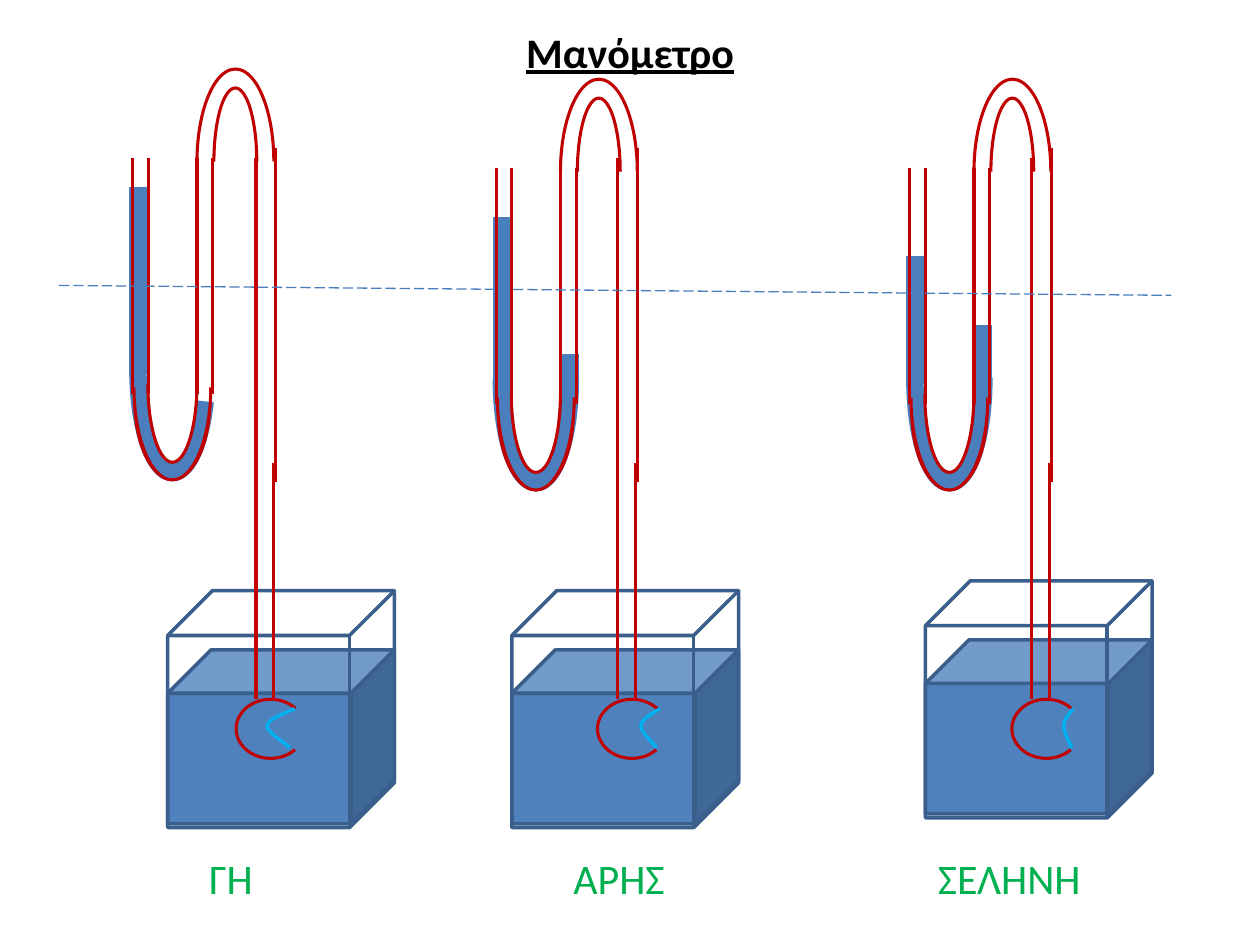
import pptx
import pptx.dml.color
import pptx.enum.dml
import pptx.enum.shapes
import pptx.enum.text
import pptx.oxml.ns
import pptx.util
from lxml import etree

Pt = pptx.util.Pt
SHAPES = pptx.enum.shapes.MSO_SHAPE
RED, WATER, GLASS, FILL = "C00000", "4B7EBC", "3A5F8C", "4F81BD"
HALF, WATER_ARC, BULB = (162, 53.93), (120, 0), (186.36, 138.53)


def rgb(value):
    """Return the colour for a hex string."""
    return pptx.dml.color.RGBColor.from_string(value)


def set_line(sp, color, width):
    """Set the outline colour and width."""
    sp.line.color.rgb = rgb(color)
    sp.line.width = Pt(width)


def add_line(s, x1, y1, x2, y2, color=RED, width=1.75):
    """Add a straight line without a shadow."""
    sp = s.shapes.add_connector(
        pptx.enum.shapes.MSO_CONNECTOR.STRAIGHT, Pt(x1), Pt(y1), Pt(x2), Pt(y2))
    set_line(sp, color, width)
    etree.SubElement(sp._element.spPr, pptx.oxml.ns.qn("a:effectLst"))
    return sp


def add_outline(s, kind, box, adjustments, color, width, fill=None):
    """Add a preset shape with an outline and an optional fill."""
    sp = s.shapes.add_shape(kind, *[Pt(v) for v in box])
    sp.shadow.inherit = False
    for i, value in enumerate(adjustments):
        sp.adjustments[i] = value
    if fill:
        sp.fill.solid()
        sp.fill.fore_color.rgb = rgb(fill)
    else:
        sp.fill.background()
    set_line(sp, color, width)
    return sp


def add_arc(s, cx, cy, w, h, rotation, angles, color=RED, width=1.75):
    """Add a rotated arc around a centre point."""
    box = (cx - w / 2, cy - h / 2, w, h)
    add_outline(s, SHAPES.ARC, box, angles, color, width).rotation = rotation


def add_text(sp, text, color, bold=None, underline=None):
    """Write one run in Calibri at the top of a shape."""
    tf = sp.text_frame
    tf.word_wrap = True
    tf.auto_size = pptx.enum.text.MSO_AUTO_SIZE.NONE
    tf.vertical_anchor = pptx.enum.text.MSO_ANCHOR.TOP
    p = tf.paragraphs[0]
    r = p.add_run()
    r.text = text
    r.font.name, r.font.size = "Calibri", Pt(24)
    r.font.bold, r.font.underline = bold, underline
    r.font.color.rgb = rgb(color)
    return p


def add_title(s, box, text):
    """Place and write the slide title."""
    sp = s.shapes.title
    sp.left, sp.top, sp.width, sp.height = [Pt(v) for v in box]
    p = add_text(sp, text, "000000", True, True)
    p.alignment = pptx.enum.text.PP_ALIGN.CENTER


def add_label(s, box, text):
    """Add the name under a manometer."""
    sp = s.shapes.add_textbox(*[Pt(v) for v in box])
    add_text(sp, text, "00B050").space_after = Pt(10)


def add_u_tube(s, x, y, left_water, right_water, arc_start):
    """Add the U-tube with its water columns and the bend above it."""
    for dx, column in ((3.2, left_water), (42.3, right_water)):
        for top, bottom in column:
            add_line(s, x + dx, top, x + dx, bottom, WATER, 10)
    cx = x + 22.7
    add_arc(s, cx, y + 121, 39.4, 118.1, 180, (arc_start, 0), WATER, 10)
    for dy, w, h, width in ((131.4, 105.8, 43.9, 1.75),
                            (129.2, 90, 28.1, 1.75),
                            (139.3, 90, 43.9, 0.75)):
        add_arc(s, cx, y + dy, w, h, 90, HALF, RED, width)
    for dx in (0, 9, 36.8, 45.7):
        add_line(s, x + dx, y, x + dx, y + 135)
    for w, h in ((105.8, 43.9), (84.2, 24.5)):
        add_arc(s, x + 58.7, y + 2.3, w, h, 270, HALF)


def add_tank(s, x, y):
    """Add the glass tank and the water in it."""
    add_outline(s, SHAPES.CUBE, (x, y + 33.8, 129.6, 99.4), (0.25,), GLASS, 2, FILL)
    add_outline(s, SHAPES.CUBE, (x, y, 129.6, 135.4), (0.198,), GLASS, 2)


def add_stem(s, x):
    """Add the long tube and the bulb at its lower end."""
    for dx, tops in ((0, (90, 180, 264.4)), (10.1, (264.4,)), (11.3, (84.4, 140.6))):
        for top in tops:
            add_line(s, x + dx, top, x + dx, top + 135)
    add_arc(s, x + 8.3, 416.5, 33.8, 39.4, 90, BULB)


def bezier(points, steps=12):
    """Return points along a cubic curve after its start."""
    curve = []
    for i in range(1, steps + 1):
        t = i / steps
        weights = ((1 - t) ** 3, 3 * t * (1 - t) ** 2, 3 * t * t * (1 - t), t ** 3)
        curve.append(tuple(sum(w * pt[k] for w, pt in zip(weights, points)) for k in (0, 1)))
    return curve


def add_membrane(s, x, y, w, h):
    """Add the curved membrane that closes the bulb."""
    knots = [(1, 0), (0.57, 0.13), (0.09, 0.26), (0.04, 0.42), (0, 0.58),
             (0.61, 0.84), (0.7, 0.92), (0.83, 1), (0.78, 0.97), (0.78, 0.92)]
    points = [pt for i in (0, 3, 6) for pt in bezier(knots[i:i + 4])]
    place = [(Pt(x + u * w), Pt(y + v * h)) for u, v in knots[:1] + points]
    builder = s.shapes.build_freeform(*place[0])
    builder.add_line_segments(place[1:], close=False)
    sp = builder.convert_to_shape()
    sp.shadow.inherit = False
    sp.fill.background()
    set_line(sp, "00B0F0", 2)


def main():
    """Build the slide and save it."""
    prs = pptx.Presentation()
    prs.slide_width, prs.slide_height = Pt(720), Pt(540)
    s = prs.slides.add_slide(prs.slide_layouts[5])
    add_title(s, (202.5, 11.3, 315, 45), "Μανόμετρο")
    manometers = [
        ("ΓΗ", (112.5, 78.8), (75.8, 90), (95.8, 337.5), 146.3, (152, 16.5), 134.63,
         ((107, 146), (140.6, 168.8), (163.1, 191.3), (185.6, 213.8)), ()),
        ("ΑΡΗΣ", (320.6, 78.8), (283.5, 95.8), (292.5, 337.5), 352.8, (365.8, 11.3), 106.31,
         ((123.8, 151.9), (140.6, 168.8), (168.8, 196.9), (191.3, 219.4)),
         ((202.5, 219.4),)),
        ("ΣΕΛΗΝΗ", (528.8, 106.9), (519.8, 95.8), (528.8, 331.9), 589.6, (607.7, 5.6), 106.31,
         ((146.3, 174.4), (168.8, 196.9), (191.3, 219.4)),
         ((185.6, 213.8), (191.3, 219.4))),
    ]
    for (name, (label_x, label_w), tube, tank, stem_x, (membrane_x, membrane_w),
         arc_start, left_water, right_water) in manometers:
        add_u_tube(s, *tube, left_water, right_water, arc_start)
        add_tank(s, *tank)
        add_stem(s, stem_x)
        add_membrane(s, membrane_x, 405, membrane_w, 22.5)
        add_label(s, (label_x, 483.8, label_w, 39.4), name)
    level = add_line(s, 33.8, 163.1, 669.4, 168.8, WATER, 0.75)
    level.line.dash_style = pptx.enum.dml.MSO_LINE.LONG_DASH
    prs.save("out.pptx")


if __name__ == "__main__":
    main()
